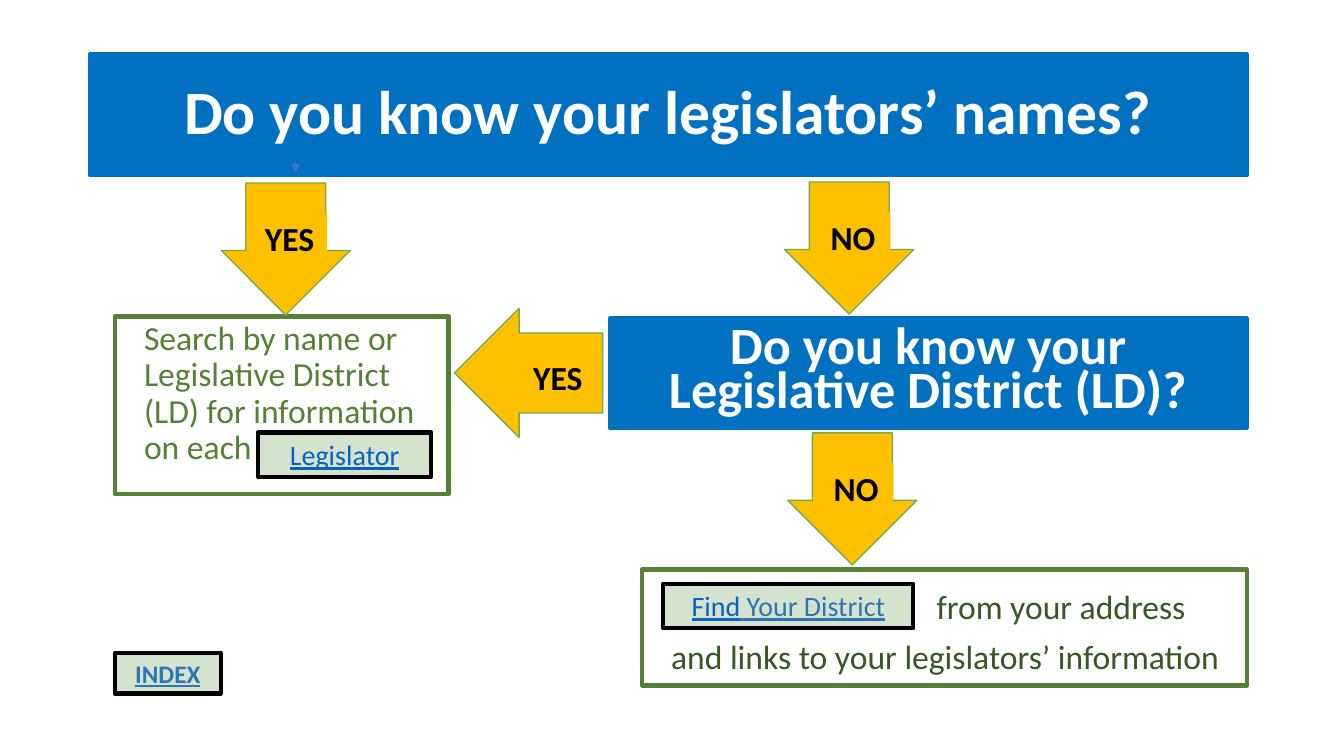
from pptx import Presentation
from pptx.dml.color import RGBColor
from pptx.enum.shapes import MSO_CONNECTOR, MSO_SHAPE
from pptx.enum.text import MSO_ANCHOR, MSO_AUTO_SIZE, PP_ALIGN
from pptx.oxml import parse_xml
from pptx.oxml.ns import nsdecls
from pptx.util import Pt

WHITE = RGBColor(0xFF, 0xFF, 0xFF)
BLACK = RGBColor(0, 0, 0)
BLUE = RGBColor(0x00, 0x70, 0xC0)
GREEN = RGBColor(0x54, 0x82, 0x35)
DARK_GREEN = RGBColor(0x38, 0x57, 0x23)
PALE_GREEN = RGBColor(0xD4, 0xE2, 0xCE)
EDGE_GREEN = RGBColor(0x70, 0xAD, 0x47)
GOLD = RGBColor(0xFF, 0xC0, 0x00)
LINK = RGBColor(0x05, 0x63, 0xC1)
LINK_LIGHT = RGBColor(0x2E, 0x75, 0xB6)
MARKER = RGBColor(0x44, 0x72, 0xC4)


class FlowSlide:
    """Draws the parts of a yes/no flow chart on one slide, in points."""

    font = "Calibri"

    def __init__(self, deck):
        self.slide = deck.slides.add_slide(deck.slide_layouts[5])
        self.shapes = self.slide.shapes

    def paint(self, shape, fill, edge=None, weight=3):
        shape.fill.solid()
        shape.fill.fore_color.rgb = fill
        if edge is None:
            shape.line.fill.background()
        else:
            shape.line.color.rgb = edge
            shape.line.width = Pt(weight)

    def frame(self, shape, anchor=MSO_ANCHOR.TOP, top=3.6, side=7.2):
        frame = shape.text_frame
        frame.word_wrap = True
        frame.auto_size = MSO_AUTO_SIZE.NONE
        frame.vertical_anchor = anchor
        frame.margin_top, frame.margin_bottom = Pt(top), Pt(3.6)
        frame.margin_left = frame.margin_right = Pt(side)
        return frame

    def add_runs(self, paragraph, runs, size, bold=False, underline=False,
                 align=PP_ALIGN.CENTER, spacing=1.0):
        paragraph.alignment = align
        paragraph.line_spacing = spacing
        for words, color in runs:
            run = paragraph.add_run()
            run.text = words
            run.font.name = self.font
            run.font.size = Pt(size)
            run.font.bold = bold
            run.font.underline = underline
            run.font.color.rgb = color

    def block(self, shapes, kind, left, top, width, height, fill, edge=None, weight=3):
        shape = shapes.add_shape(kind, Pt(left), Pt(top), Pt(width), Pt(height))
        shape.shadow.inherit = False
        self.paint(shape, fill, edge, weight)
        return shape

    def box(self, left, top, width, height, fill, edge):
        return self.block(self.shapes, MSO_SHAPE.RECTANGLE, left, top, width, height, fill, edge)

    def title(self, words, left, top, width, height):
        title = self.shapes.title
        title.left, title.top = Pt(left), Pt(top)
        title.width, title.height = Pt(width), Pt(height)
        self.paint(title, BLUE, BLUE)
        frame = self.frame(title, MSO_ANCHOR.MIDDLE)
        self.add_runs(frame.paragraphs[0], [(words, WHITE)], 44, bold=True, spacing=0.9)

    def question(self, words, left, top, width, height):
        frame = self.frame(self.box(left, top, width, height, BLUE, BLUE), MSO_ANCHOR.MIDDLE)
        self.add_runs(frame.paragraphs[0], [(words, WHITE)], 37.4, bold=True, spacing=0.7)

    def answer(self, lines, color, left, top, width, height, inset=3.6):
        frame = self.frame(self.box(left, top, width, height, WHITE, GREEN), top=inset)
        for number, (words, indent) in enumerate(lines):
            paragraph = frame.add_paragraph() if number else frame.paragraphs[0]
            self.add_runs(paragraph, [(words, color)], 24, align=PP_ALIGN.LEFT, spacing=0.9)
            paragraph.space_before = Pt(10 if number else 0)
            paragraph._p.get_or_add_pPr().set("marL", str(Pt(indent)))

    def choice(self, words, kind, left, top, size, label):
        shapes = self.shapes.add_group_shape().shapes
        arrow = self.block(shapes, kind, left, top, *size, GOLD, EDGE_GREEN, 1)
        arrow.adjustments[0], arrow.adjustments[1] = 0.62, 0.5
        across, down, width = label
        plate = self.block(shapes, MSO_SHAPE.RECTANGLE, left + across, top + down, width, 36, GOLD)
        frame = self.frame(plate, side=0)
        self.add_runs(frame.paragraphs[0], [(words, BLACK)], 24, bold=True)

    def button(self, runs, left, top, width, height, size=20, bold=False):
        frame = self.frame(self.box(left, top, width, height, PALE_GREEN, BLACK))
        self.add_runs(frame.paragraphs[0], runs, size, bold=bold, underline=True)

    def marker(self, x, top, bottom):
        marker = self.shapes.add_connector(
            MSO_CONNECTOR.STRAIGHT, Pt(x), Pt(top), Pt(x), Pt(bottom))
        marker.line.color.rgb = MARKER
        marker.line.width = Pt(0.5)
        marker.line._get_or_add_ln().append(
            parse_xml(f'<a:tailEnd {nsdecls("a")} type="triangle"/>'))
        marker._element.spPr.append(parse_xml(f'<a:effectLst {nsdecls("a")}/>'))


def main():
    deck = Presentation()
    deck.slide_width, deck.slide_height = Pt(960), Pt(540)
    flow = FlowSlide(deck)

    flow.title("Do you know your legislators’ names?", 64, 38.9, 826.6, 86.4)
    flow.answer(
        [("Search by name or Legislative District (LD) for information on each", 13.7)],
        GREEN, 82.1, 226.1, 238.3, 126.7)
    flow.question("Do you know your Legislative District (LD)?", 435.6, 227.5, 455, 77.8)
    flow.marker(211, 115.2, 123.1)

    for words, left, top in (("NO", 560.5, 130), ("NO", 562.7, 309.2), ("YES", 158, 130.7)):
        flow.choice(words, MSO_SHAPE.DOWN_ARROW, left, top, (92.2, 94.3), (22.2, 21.2, 53.3))
    flow.choice("YES", MSO_SHAPE.LEFT_ARROW, 324.7, 220.3, (105.8, 92.2), (42.5, 31, 62.6))

    flow.answer(
        [("from your address", 203.4), ("and links to your legislators’ information", 13.7)],
        DARK_GREEN, 458.6, 406.8, 432, 82.8, inset=15)
    flow.button([("Legislator", LINK)], 184.3, 308.9, 123.8, 31.7)
    flow.button([("Find", LINK), (" Your District", LINK_LIGHT)], 473.8, 416.9, 178.6, 31.7)
    flow.button([("INDEX", LINK_LIGHT)], 82.1, 466.6, 75.6, 28.8, size=18, bold=True)

    deck.save("out.pptx")


if __name__ == "__main__":
    main()
